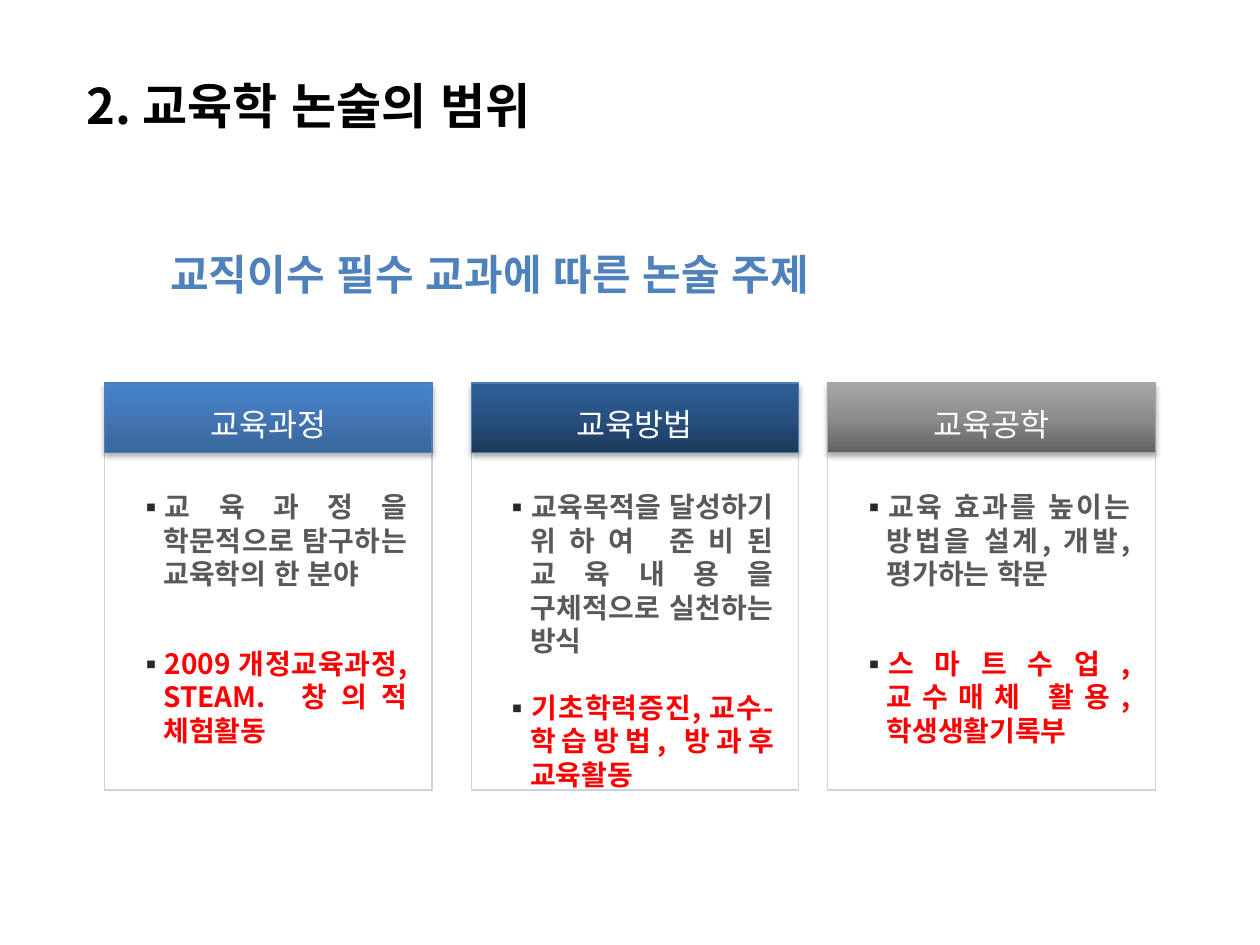
from pptx import Presentation
from pptx.dml.color import RGBColor as Rgb
from pptx.enum.lang import MSO_LANGUAGE_ID as Lang
from pptx.enum.shapes import MSO_SHAPE as Kind
from pptx.enum.text import MSO_AUTO_SIZE as Fit, PP_ALIGN as Align
from pptx.oxml.ns import qn
from pptx.util import Emu, Pt
from lxml.etree import SubElement as Sub

PX = 9144
THEME = {
    "font": "Noto Sans CJK KR",
    "title": {"size": 28, "bold": True, "color": "000000", "line": 36},
    "head": {"size": 24, "bold": True, "color": "4F81BD", "line": 30},
    "label": {"size": 18, "bold": False, "color": "FFFFFF", "line": 23},
    "body": {"size": 16, "bold": True, "color": "595959", "line": 19.1},
    "topic": {"size": 16, "bold": True, "color": "FF0000", "line": 19.1},
    "bullet": "292929",
    "panel": "FFFFFF",
    "edge": "CBD3E3",
    "shade": "000000",
}
CARDS = [
    (83, "교육과정", "교육과정을 학문적으로 탐구하는 교육학의 한 분야",
     "2009 개정교육과정, STEAM. 창의적 체험활동", 32, 220, "4B7EBC", 90,
     [(0, "2F5F99"), (80, "3D7CC7"), (100, "3A7CCB")]),
    (374, "교육방법", "교육목적을 달성하기 위하여 준비된 교육내용을 구체적으로 실천하는 방식",
     "기초학력증진, 교수-학습방법, 방과후 교육활동", 19, 233, "4B7EBC", 100,
     [(0, "1C395B"), (50, "285181"), (100, "306099")]),
    (657, "교육공학", "교육 효과를 높이는 방법을 설계, 개발, 평가하는 학문",
     "스마트수업, 교수매체 활용, 학생생활기록부", 32, 220, "A6A6A6", 100,
     [(0, "626262"), (50, "8C8C8C"), (100, "A6A6A6")]),
]


def put(home, at, rows, wrap=True, fit=True):
    frame = home.add_textbox(*[Emu(n * PX) for n in at]).text_frame
    frame.word_wrap = wrap
    frame.auto_size = Fit.SHAPE_TO_FIT_TEXT if fit else Fit.NONE
    for i, (text, style, align, hang, gap) in enumerate(rows):
        para = frame.add_paragraph() if i else frame.paragraphs[0]
        look = THEME[style]
        form = {"alignment": align, "line_spacing": Pt(look["line"]), "space_after": Pt(gap)}
        for key, val in form.items():
            setattr(para, key, val)
        props = para._p.get_or_add_pPr()
        if hang:
            props.set("marL", str(hang * PX))
            props.set("indent", str(-hang * PX))
        if style in ("body", "topic"):
            tint = Sub(props, qn("a:buClr"))
            Sub(tint, qn("a:srgbClr"), val=THEME["bullet"])
            Sub(props, qn("a:buFont"), typeface=THEME["font"])
            Sub(props, qn("a:buChar"), char="▪")
        run = para.add_run()
        run.text = text
        form = {"name": THEME["font"], "size": Pt(look["size"]),
                "bold": look["bold"], "language_id": Lang.KOREAN}
        for key, val in form.items():
            setattr(run.font, key, val)
        run.font.color.rgb = Rgb.from_string(look["color"])
        Sub(run._r.get_or_add_rPr(), qn("a:ea"), typeface=THEME["font"])


def box(home, at, edge):
    shape = home.add_shape(Kind.RECTANGLE, *[Emu(n * PX) for n in at])
    shape.shadow.inherit = False
    shape.line.color.rgb = Rgb.from_string(edge)
    shape.line.width = Pt(0.75)
    return shape


deck = Presentation()
deck.slide_width, deck.slide_height = Emu(1000 * PX), Emu(750 * PX)
slide = deck.slides.add_slide(deck.slide_layouts[6])

for left, name, about, topic, gap, tall, edge, clear, stops in CARDS:
    card = slide.shapes.add_group_shape().shapes
    panel = box(card, (left, 304, 260, 323), THEME["edge"])
    panel.fill.solid()
    panel.fill.fore_color.rgb = Rgb.from_string(THEME["panel"])

    band = box(card, (left, 304, 260, 55), edge)
    band.fill.gradient()
    band.fill.gradient_angle = 90
    props = band._element.spPr
    ramp = props.find(qn("a:gradFill")).find(qn("a:gsLst"))
    for old in list(ramp):
        ramp.remove(old)
    for pos, color in stops:
        stop = Sub(ramp, qn("a:gs"), pos=str(pos * 1000))
        tint = Sub(stop, qn("a:srgbClr"), val=color)
        Sub(tint, qn("a:alpha"), val=str(clear * 1000))
    cast = Sub(props.find(qn("a:effectLst")), qn("a:outerShdw"), blurRad=str(Pt(3.1)),
               dist=str(Pt(1.8)), dir="5400000", rotWithShape="0")
    tint = Sub(cast, qn("a:srgbClr"), val=THEME["shade"])
    Sub(tint, qn("a:alpha"), val="35000")

    put(card, (left + 74, 315, 121, 40), [(name, "label", Align.JUSTIFY, 0, 0)], wrap=False)
    put(card, (left + 16, 384, 234, tall), [
        (about, "body", Align.JUSTIFY, 21, gap),
        (topic, "topic", Align.JUSTIFY, 21, 0),
    ])

put(slide.shapes, (96, 191, 585, 51),
    [("교직이수 필수 교과에 따른 논술 주제", "head", Align.CENTER, 0, 0)], wrap=False)
put(slide.shapes, (59, 52, 798, 55),
    [("2. 교육학 논술의 범위", "title", Align.LEFT, 38, 0)], fit=False)

deck.save("out.pptx")
